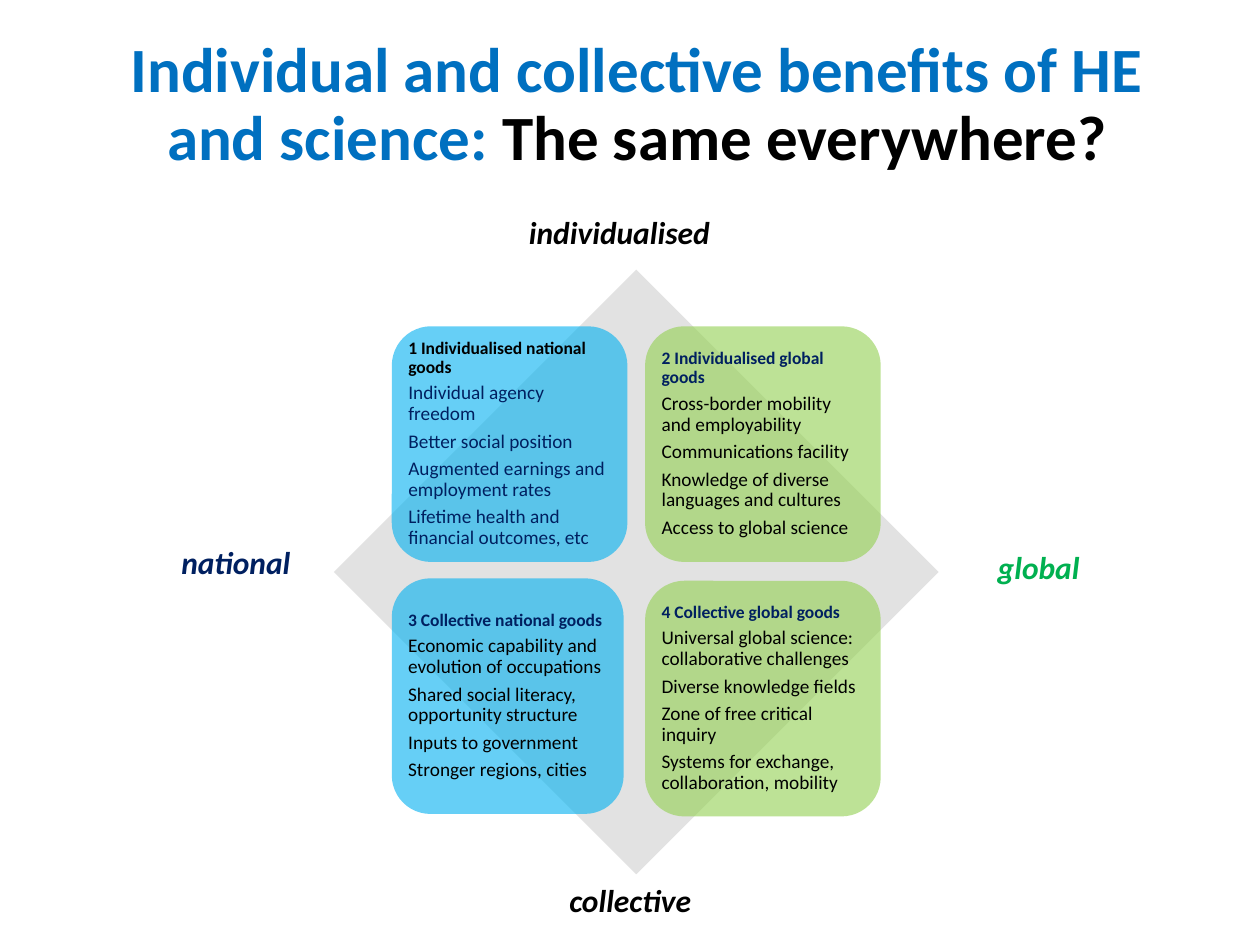
from pptx import Presentation
from pptx import util as u
from pptx.dml.color import RGBColor
from pptx.enum import shapes, text
from pptx.oxml.ns import qn
from lxml import etree

BLUE = RGBColor(0x00, 0x70, 0xC0)
NAVY = RGBColor(0x00, 0x20, 0x60)
BLACK = RGBColor(0x00, 0x00, 0x00)
WHITE = RGBColor(0xFF, 0xFF, 0xFF)
GREY = RGBColor(0xD9, 0xD9, 0xD9)
SKY = RGBColor(0x00, 0xB0, 0xF0)
LIME = RGBColor(0x92, 0xD0, 0x50)
GREEN = RGBColor(0x00, 0xB0, 0x50)
KIND = shapes.MSO_SHAPE

deck = Presentation()
deck.slide_width, deck.slide_height = u.Inches(10), u.Inches(7.5)
slide = deck.slides.add_slide(deck.slide_layouts[5])


def add_block(kind, box, color, alpha=100):
    """Add a borderless shape; alpha is its opacity in percent."""
    shape = slide.shapes.add_shape(kind, *map(u.Inches, box))
    shape.shadow.inherit = False
    shape.line.fill.background()
    shape.fill.solid()
    shape.fill.fore_color.rgb = color
    if alpha < 100:
        tone = shape.fill._xPr.find(".//" + qn("a:srgbClr"))
        etree.SubElement(tone, qn("a:alpha")).set("val", str(alpha * 1000))
    shape.text_frame.word_wrap = True
    return shape


def style(run, size, color, bold=False, italic=False):
    font = run.font
    font.name, font.size = "Calibri", u.Pt(size)
    font.color.rgb, font.bold, font.italic = color, bold, italic


# Title
title = slide.shapes.title
title.left, title.top = u.Inches(0.74), u.Inches(0.23)
title.width, title.height = u.Inches(8.63), u.Inches(1.23)
frame = title.text_frame
frame.word_wrap = True
frame.auto_size = text.MSO_AUTO_SIZE.NONE
frame.vertical_anchor = text.MSO_ANCHOR.MIDDLE
para = frame.paragraphs[0]
para.alignment, para.line_spacing = text.PP_ALIGN.CENTER, 0.9
for words, color in (
    ("Individual and collective benefits of HE and science: ", BLUE),
    ("The same everywhere?", BLACK),
):
    run = para.add_run()
    run.text = words
    style(run, 36, color, bold=True)

# Diamond with the four kinds of goods
add_block(KIND.DIAMOND, (2.65, 2.14, 4.8, 4.8), GREY, 75)

SIDE = 1.87
COLS = (3.11, 5.12)
FILLS = (SKY, LIME)
# top, width, head colour, body colour, lines
goods = [
    (2.59, SIDE, BLACK, NAVY, [
        "1 Individualised national goods", "Individual agency freedom",
        "Better social position", "Augmented earnings and employment rates",
        "Lifetime health and financial outcomes, etc"]),
    (2.59, SIDE, NAVY, BLACK, [
        "2 Individualised global goods",
        "Cross-border mobility and employability", "Communications facility",
        "Knowledge of diverse languages and cultures",
        "Access to global science"]),
    (4.59, 1.84, NAVY, BLACK, [
        "3 Collective national goods",
        "Economic capability and evolution of occupations",
        "Shared social literacy, opportunity structure",
        "Inputs to government", "Stronger regions, cities"]),
    (4.61, SIDE, NAVY, BLACK, [
        "4 Collective global goods",
        "Universal global science: collaborative challenges",
        "Diverse knowledge fields", "Zone of free critical inquiry",
        "Systems for exchange, collaboration, mobility"]),
]
for i, (top, width, head, body, lines) in enumerate(goods):
    col = i % 2
    card = add_block(KIND.ROUNDED_RECTANGLE, (COLS[col], top, width, SIDE),
                     FILLS[col], 60)
    frame = card.text_frame
    frame.margin_left = frame.margin_right = u.Inches(0.04)
    frame.margin_top = frame.margin_bottom = u.Inches(0.04)
    frame.vertical_anchor = text.MSO_ANCHOR.MIDDLE
    frame.text = "\n".join(lines)
    for row, para in enumerate(frame.paragraphs):
        size = 11 if row else 10
        para.alignment, para.line_spacing = text.PP_ALIGN.LEFT, 0.9
        para.space_after = u.Pt(0.35 * size)
        style(para.runs[0], size, body if row else head, bold=row == 0)

# Names at the ends of the two axes
for name, box, color in (
    ("individualised", (4.1, 1.64, 1.9, 0.37), BLACK),
    ("collective", (4.42, 6.94, 1.26, 0.31), BLACK),
    ("national", (1.34, 4.26, 1.12, 0.33), NAVY),
    ("global", (7.82, 4.3, 0.94, 0.43), GREEN),
):
    frame = add_block(KIND.RECTANGLE, box, WHITE).text_frame
    frame.vertical_anchor = text.MSO_ANCHOR.TOP
    frame.text = name
    para = frame.paragraphs[0]
    para.alignment = text.PP_ALIGN.LEFT
    style(para.runs[0], 18, color, bold=True, italic=True)

deck.save("out.pptx")
